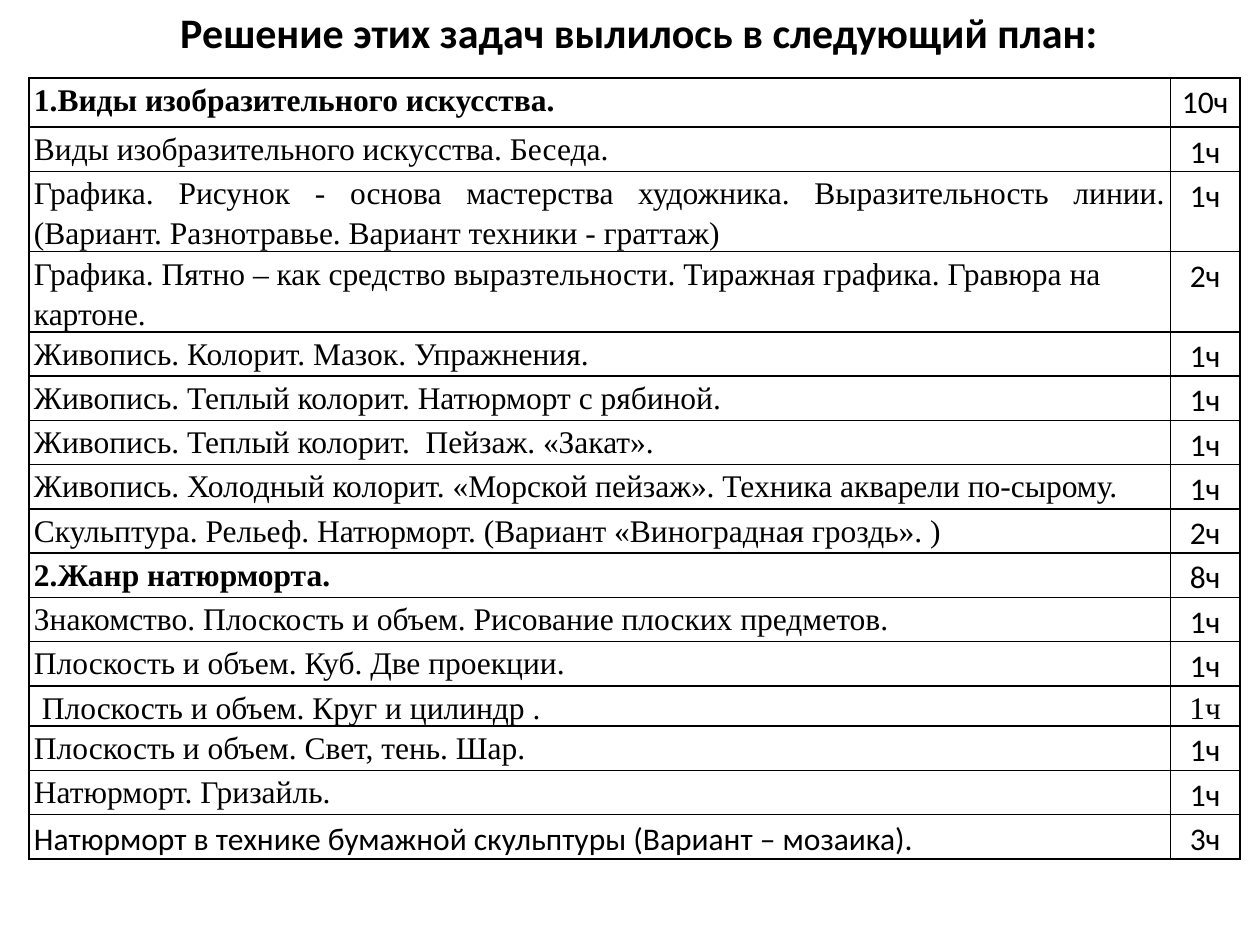
from dataclasses import dataclass

from lxml.etree import SubElement
from pptx import Presentation
from pptx.dml.color import RGBColor
from pptx.enum.text import MSO_ANCHOR, MSO_AUTO_SIZE, PP_ALIGN
from pptx.oxml.ns import qn
from pptx.util import Inches, Pt


@dataclass(frozen=True)
class Theme:
    ink: str = "000000"
    sans: str = "Calibri"
    serif: str = "Times New Roman"
    title_size: int = 24
    body_size: int = 18
    border_width: int = 1


@dataclass(frozen=True)
class Lesson:
    topic: str
    hours: str
    bold: bool = False
    align: PP_ALIGN = PP_ALIGN.LEFT
    topic_font: str = Theme.serif
    hours_font: str = Theme.sans


THEME = Theme()
TITLE = "Решение этих задач вылилось в следующий план:"
LESSONS = [
    Lesson("1.Виды изобразительного искусства.", "10ч", bold=True),
    Lesson("Виды изобразительного искусства. Беседа.", "1ч"),
    Lesson("Графика. Рисунок - основа мастерства художника. Выразительность линии. "
           "(Вариант. Разнотравье. Вариант техники - граттаж)", "1ч",
           align=PP_ALIGN.JUSTIFY),
    Lesson("Графика. Пятно – как средство выразтельности. Тиражная графика. "
           "Гравюра на картоне.", "2ч"),
    Lesson("Живопись. Колорит. Мазок. Упражнения.", "1ч"),
    Lesson("Живопись. Теплый колорит. Натюрморт с рябиной.", "1ч",
           align=PP_ALIGN.JUSTIFY),
    Lesson("Живопись. Теплый колорит.  Пейзаж. «Закат».", "1ч"),
    Lesson("Живопись. Холодный колорит. «Морской пейзаж». "
           "Техника акварели по-сырому.", "1ч"),
    Lesson("Скульптура. Рельеф. Натюрморт. (Вариант «Виноградная гроздь». )", "2ч"),
    Lesson("2.Жанр натюрморта.", "8ч", bold=True),
    Lesson("Знакомство. Плоскость и объем. Рисование плоских предметов.", "1ч"),
    Lesson("Плоскость и объем. Куб. Две проекции.", "1ч", align=PP_ALIGN.JUSTIFY),
    Lesson(" Плоскость и объем. Круг и цилиндр .", "1ч", hours_font=THEME.serif),
    Lesson("Плоскость и объем. Свет, тень. Шар.", "1ч"),
    Lesson("Натюрморт. Гризайль.", "1ч"),
    Lesson("Натюрморт в технике бумажной скульптуры (Вариант – мозаика).", "3ч",
           topic_font=THEME.sans),
]


def set_attributes(target, values):
    for name, value in values.items():
        setattr(target, name, value)


def write_text(frame, text, font, size, bold=False, **paragraph_format):
    para = frame.paragraphs[0]
    set_attributes(para, paragraph_format)
    span = para.add_run()
    span.text = text
    set_attributes(span.font, {"name": font, "size": Pt(size), "bold": bold})
    span.font.color.rgb = RGBColor.from_string(THEME.ink)


def add_title(page):
    box = page.shapes.title
    set_attributes(box, {"left": Inches(1.33), "top": Inches(0),
                         "width": Inches(7.56), "height": Inches(0.5)})
    set_attributes(box.text_frame, {"word_wrap": True,
                                    "auto_size": MSO_AUTO_SIZE.NONE,
                                    "vertical_anchor": MSO_ANCHOR.TOP})
    write_text(box.text_frame, TITLE, THEME.sans, THEME.title_size,
               bold=True, alignment=PP_ALIGN.LEFT)


def draw_borders(cell):
    """Outline all four sides; the lines must precede the fill in the XML."""
    properties = cell._tc.get_or_add_tcPr()
    for side in ("a:lnL", "a:lnR", "a:lnT", "a:lnB"):
        line = SubElement(properties, qn(side), w=str(Pt(THEME.border_width)))
        fill = SubElement(line, qn("a:solidFill"))
        SubElement(fill, qn("a:srgbClr"), val=THEME.ink)


def fill_cell(cell, text, font, align, bold=False):
    set_attributes(cell, {"margin_left": Inches(0.04), "margin_right": Inches(0.04),
                          "margin_top": 0, "margin_bottom": 0})
    draw_borders(cell)
    cell.fill.background()
    write_text(cell.text_frame, text, font, THEME.body_size, bold,
               alignment=align, line_spacing=1.15)


def add_plan(page):
    row_height, first_height = Inches(0.18), Inches(0.39)
    topic_width, hours_width = Inches(9.06), Inches(0.55)
    table = page.shapes.add_table(
        len(LESSONS), 2, Inches(0.23), Inches(0.62), topic_width + hours_width,
        first_height + row_height * (len(LESSONS) - 1)).table
    set_attributes(table, {"first_row": False, "horz_banding": False})
    table.columns[0].width, table.columns[1].width = topic_width, hours_width
    for index, lesson in enumerate(LESSONS):
        table.rows[index].height = row_height if index else first_height
        fill_cell(table.cell(index, 0), lesson.topic, lesson.topic_font,
                  lesson.align, lesson.bold)
        fill_cell(table.cell(index, 1), lesson.hours, lesson.hours_font,
                  PP_ALIGN.CENTER)


def main():
    deck = Presentation()
    set_attributes(deck, {"slide_width": Inches(10), "slide_height": Inches(7.5)})
    page = deck.slides.add_slide(deck.slide_layouts.get_by_name("Title Only"))
    add_title(page)
    add_plan(page)
    deck.save("out.pptx")


if __name__ == "__main__":
    main()
